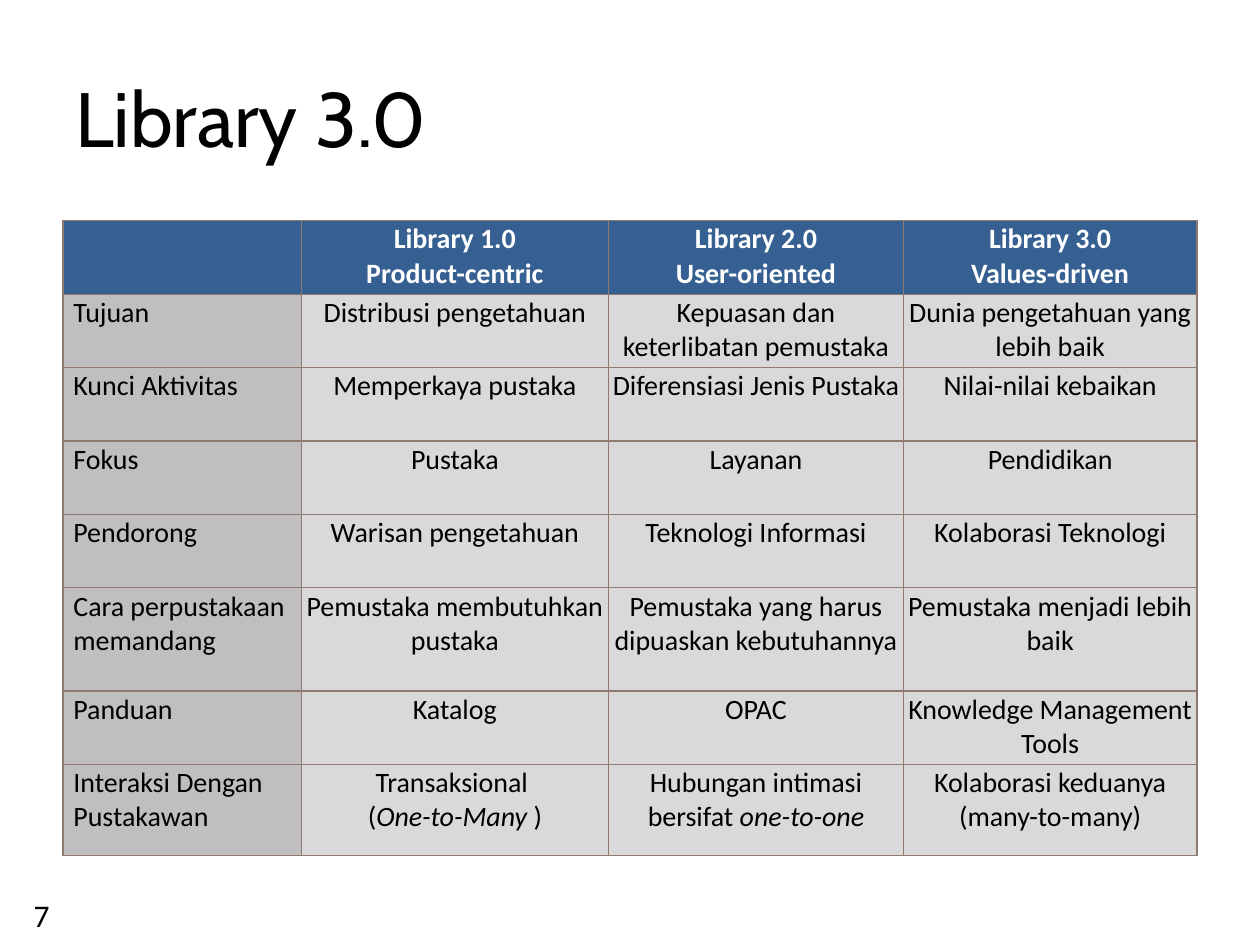
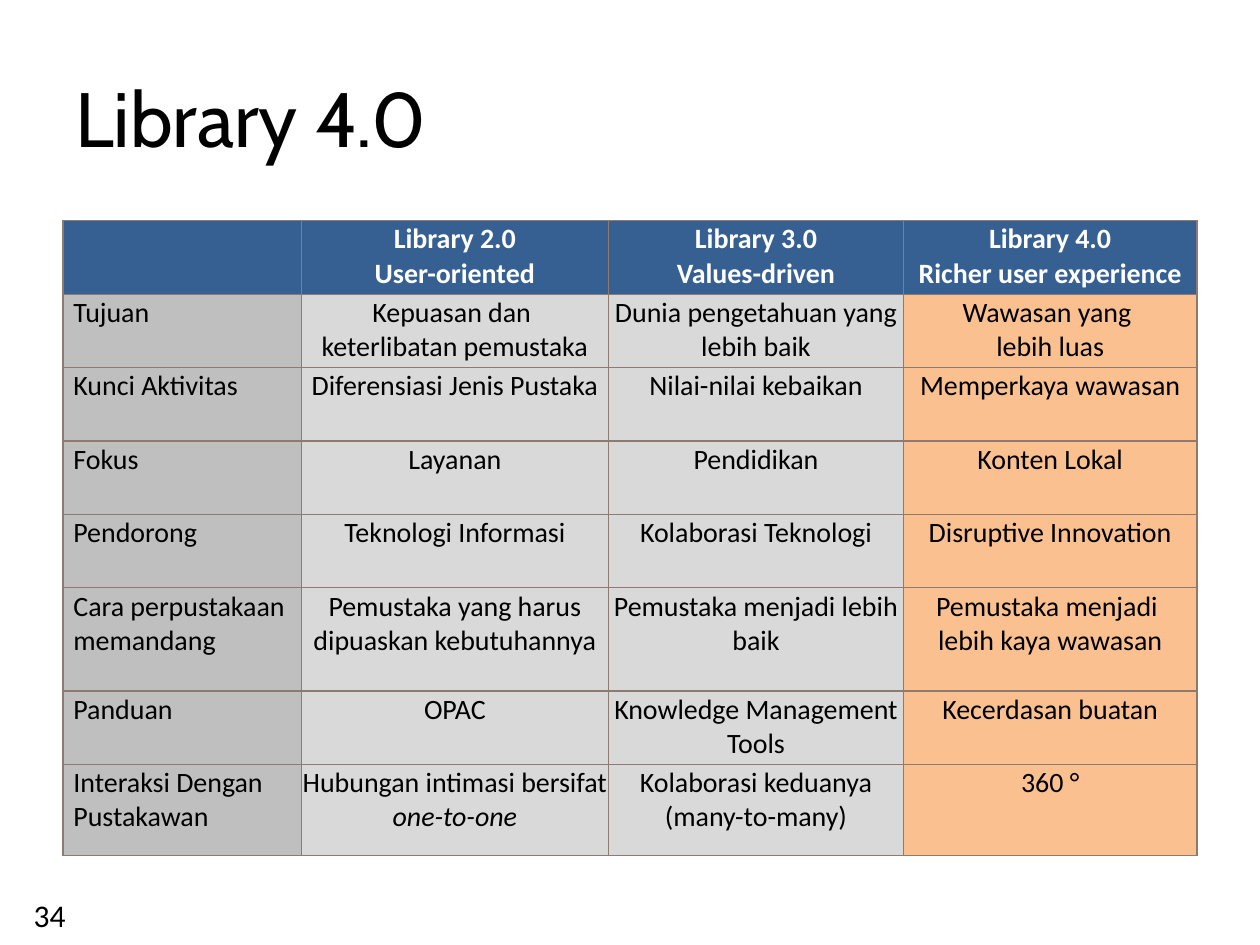
from lxml import etree
from pptx import Presentation
from pptx import util as u
from pptx.dml.color import RGBColor
from pptx.enum import text
from pptx.oxml import ns

BLACK, WHITE = "000000", "FFFFFF"
HEADER_BLUE, LABEL_GREY, BODY_GREY = "376092", "BFBFBF", "D9D9D9"
NEWEST_ORANGE, BORDER_BROWN = "FAC090", "8F7A70"
COLUMN_WIDTHS = [4.8, 6.2, 5.94, 5.92]
ROW_HEIGHTS = [1.48] * 5 + [2.08, 1.48, 1.84]

# Each column runs from header to last row; asterisks enclose italic text.
aspects = ["", "Tujuan", "Kunci Aktivitas", "Fokus", "Pendorong",
           "Cara perpustakaan memandang", "Panduan",
           "Interaksi Dengan Pustakawan"]
library_1 = ["Library 1.0\nProduct-centric", "Distribusi pengetahuan",
             "Memperkaya pustaka", "Pustaka", "Warisan pengetahuan",
             "Pemustaka membutuhkan pustaka", "Katalog",
             "Transaksional \n(*One-to-Many* )"]
library_2 = ["Library 2.0\nUser-oriented",
             "Kepuasan dan keterlibatan pemustaka",
             "Diferensiasi Jenis Pustaka", "Layanan", "Teknologi Informasi",
             "Pemustaka yang harus dipuaskan kebutuhannya", "OPAC",
             "Hubungan intimasi bersifat* one-to-one*"]
library_3 = ["Library 3.0\nValues-driven",
             "Dunia pengetahuan yang lebih baik", "Nilai-nilai kebaikan",
             "Pendidikan", "Kolaborasi Teknologi",
             "Pemustaka menjadi lebih baik", "Knowledge Management Tools",
             "Kolaborasi keduanya\n(many-to-many)"]
library_4 = ["Library 4.0\nRicher user experience",
             "Wawasan yang \nlebih luas", "Memperkaya wawasan",
             "Konten Lokal", "Disruptive Innovation",
             "Pemustaka menjadi \nlebih kaya wawasan", "Kecerdasan buatan",
             "360 °"]
library_2_split = [library_2[0], "Kepuasan dan \nketerlibatan pemustaka",
                   *library_2[2:]]

comparisons = [
    ("Library 3.0", "7", [aspects, library_1, library_2, library_3],
     BODY_GREY),
    ("Library 4.0", "34", [aspects, library_2_split, library_3, library_4],
     NEWEST_ORANGE),
]


def rgb(color):
    """Turn a hex string into a colour object."""
    return RGBColor.from_string(color)


def add_border(cell):
    """Draw a thin line on all four sides of the cell."""
    properties = cell._tc.get_or_add_tcPr()
    for side in ("a:lnL", "a:lnR", "a:lnT", "a:lnB"):
        line = etree.SubElement(properties, ns.qn(side), w=str(u.Pt(0.75)))
        fill = etree.SubElement(line, ns.qn("a:solidFill"))
        etree.SubElement(fill, ns.qn("a:srgbClr"), val=BORDER_BROWN)


presentation = Presentation()
presentation.slide_width = u.Cm(25.4)
presentation.slide_height = u.Cm(19.05)
blank_layout = presentation.slide_layouts[6]

for title, page_number, columns, last_column_fill in comparisons:
    slide = presentation.slides.add_slide(blank_layout)

    for words, place, size, font_name, anchor in [
        (title, (1.27, 0.76, 22.86, 3.18), 44, "Cabin",
         text.MSO_ANCHOR.MIDDLE),
        (page_number, (0.43, 17.93, 2.1, 1.32), 18, "Calibri",
         text.MSO_ANCHOR.TOP),
    ]:
        text_frame = slide.shapes.add_textbox(*map(u.Cm, place)).text_frame
        text_frame.word_wrap = True
        text_frame.vertical_anchor = anchor
        text_frame.text = words
        font = text_frame.paragraphs[0].runs[0].font
        font.size, font.name = u.Pt(size), font_name
        font.color.rgb = rgb(BLACK)

    table = slide.shapes.add_table(
        len(ROW_HEIGHTS), len(COLUMN_WIDTHS), u.Cm(1.27), u.Cm(4.45),
        u.Cm(sum(COLUMN_WIDTHS)), u.Cm(sum(ROW_HEIGHTS))).table
    for row, height in zip(table.rows, ROW_HEIGHTS):
        row.height = u.Cm(height)

    body_fills = [LABEL_GREY, BODY_GREY, BODY_GREY, last_column_fill]
    for column_index, entries in enumerate(columns):
        table.columns[column_index].width = u.Cm(COLUMN_WIDTHS[column_index])
        for row_index, entry in enumerate(entries):
            is_header = row_index == 0
            cell = table.cell(row_index, column_index)
            add_border(cell)
            cell.fill.solid()
            cell.fill.fore_color.rgb = rgb(
                HEADER_BLUE if is_header else body_fills[column_index])
            cell.margin_left = cell.margin_right = u.Cm(0.03)
            cell.margin_top = cell.margin_bottom = u.Cm(0.03)
            if not entry:
                continue

            for line_index, line in enumerate(entry.split("\n")):
                text_frame = cell.text_frame
                paragraph = (text_frame.add_paragraph() if line_index
                             else text_frame.paragraphs[0])
                if column_index:
                    paragraph.alignment = text.PP_ALIGN.CENTER
                else:
                    paragraph._p.get_or_add_pPr().set("marL", str(u.Cm(0.18)))
                for part_index, part in enumerate(line.split("*")):
                    if not part:
                        continue
                    run = paragraph.add_run()
                    run.text = part
                    run.font.size, run.font.name = u.Pt(16), "Calibri"
                    run.font.bold = is_header
                    run.font.italic = part_index % 2 == 1
                    run.font.color.rgb = rgb(WHITE if is_header else BLACK)

presentation.save("out.pptx")
